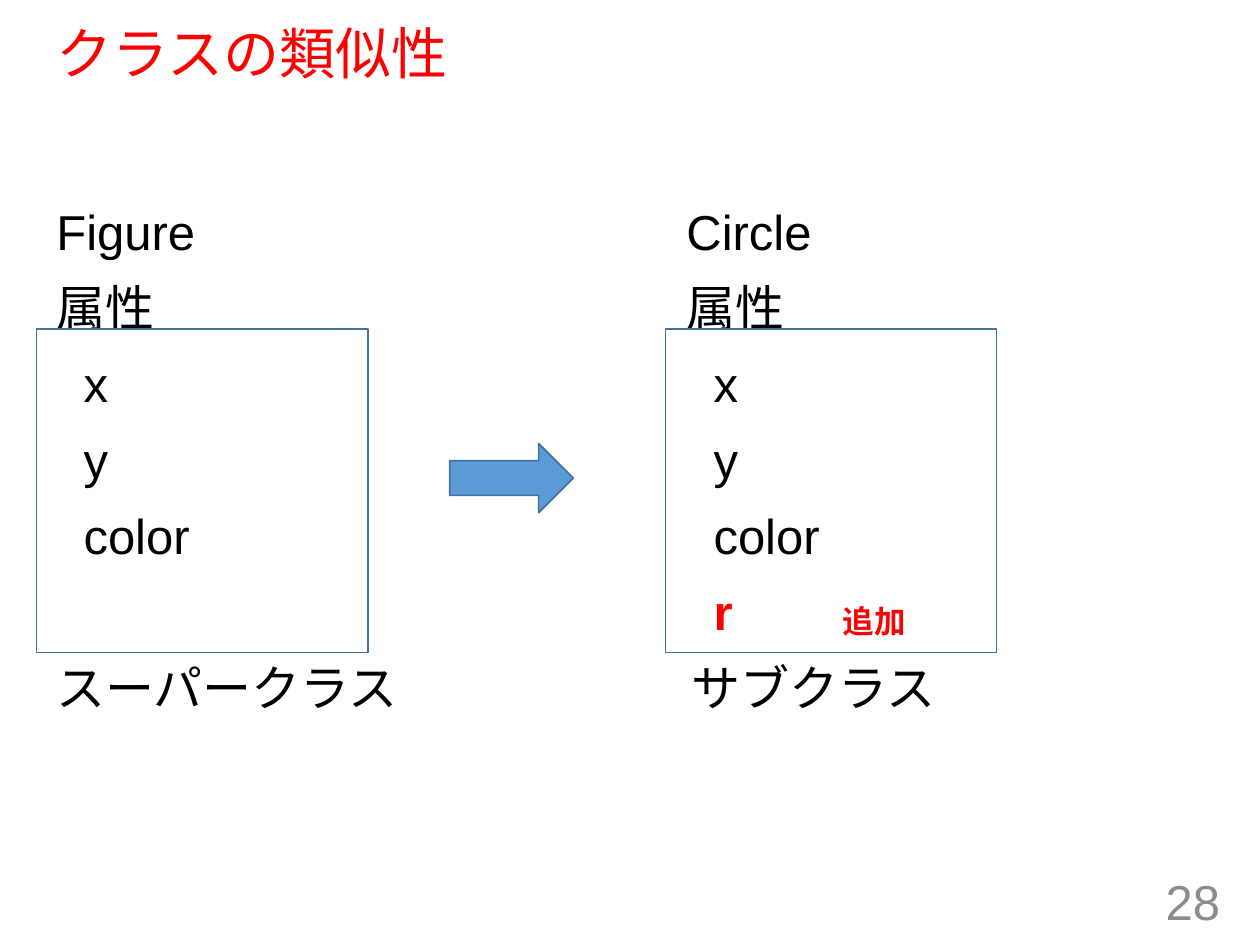
from dataclasses import dataclass

from pptx import Presentation
from pptx.dml.color import RGBColor
from pptx.enum import shapes, text
from pptx.util import Pt

COLORS = {"red": "FF0000", "black": "000000", "gray": "8C8C8C",
          "blue": "5B9BD5", "outline": "43739E"}
FONT = "Arial"
LINE, GAP = 33.4, 10  # line height and space between lines


@dataclass
class Row:
    text: str
    indent: float = 0
    gap: float = GAP
    color: str = "black"
    bold: bool = False


@dataclass
class ClassColumn:
    left: float
    frame_left: float
    rows: list[Row]


def rgb(name: str) -> RGBColor:
    return RGBColor.from_string(COLORS[name])


def write(p, content: str, *, size: float = 28, color: str = "black",
          bold: bool = False, align=text.PP_ALIGN.LEFT) -> None:
    p.alignment = align
    r = p.add_run()
    r.text = content
    f = r.font
    f.name, f.size, f.bold = FONT, Pt(size), bold
    f.color.rgb = rgb(color)


def add_box(s, x: float, y: float, w: float, h: float, *, wrap: bool = True,
            anchor=text.MSO_ANCHOR.TOP):
    tf = s.shapes.add_textbox(Pt(x), Pt(y), Pt(w), Pt(h)).text_frame
    tf.word_wrap = wrap
    tf.vertical_anchor = anchor
    return tf


def add_outlined(s, kind, x: float, y: float, w: float, h: float,
                 fill: str | None = None) -> None:
    sp = s.shapes.add_shape(kind, Pt(x), Pt(y), Pt(w), Pt(h))
    sp.shadow.inherit = False
    if fill:
        sp.fill.solid()
        sp.fill.fore_color.rgb = rgb(fill)
    else:
        sp.fill.background()
    sp.line.color.rgb = rgb("outline")
    sp.line.width = Pt(1)


def add_column(s, col: ClassColumn) -> None:
    tf = add_box(s, col.left, 115.4, 260, 310)
    tf.margin_top = 0
    for i, row in enumerate(col.rows):
        p = tf.paragraphs[0] if i == 0 else tf.add_paragraph()
        p.line_spacing = Pt(LINE)
        p.space_before = Pt(row.gap if i else 0)
        p._p.get_or_add_pPr().set("marL", str(Pt(row.indent)))
        write(p, row.text, color=row.color, bold=row.bold)
    add_outlined(s, shapes.MSO_SHAPE.RECTANGLE, col.frame_left, 188, 189.2, 185)


def main() -> None:
    prs = Presentation()
    prs.slide_width, prs.slide_height = Pt(720), Pt(540)
    s = prs.slides.add_slide(prs.slide_layouts[6])

    # Title
    tf = add_box(s, 25.2, 13.7, 666, 36.7, anchor=text.MSO_ANCHOR.MIDDLE)
    tf.paragraphs[0].line_spacing = 0.9
    write(tf.paragraphs[0], "クラスの類似性", size=32, color="red")

    # Superclass and subclass with their shared attributes
    shared = [Row(name, 15.5) for name in ("x", "y", "color")]
    columns = [
        ClassColumn(25.2, 20.9, [
            Row("Figure"), Row("属性"), *shared,
            Row("スーパークラス", gap=LINE + 2 * GAP)]),
        ClassColumn(385.2, 380.2, [
            Row("Circle"), Row("属性"), *shared,
            Row("r", 15.5, color="red", bold=True), Row("サブクラス", 3)]),
    ]
    for col in columns:
        add_column(s, col)

    # Label of the added attribute
    tf = add_box(s, 474.5, 340.6, 51.1, 28.8, wrap=False)
    write(tf.paragraphs[0], "追加", size=18, color="red", bold=True)

    # Arrow from superclass to subclass
    add_outlined(s, shapes.MSO_SHAPE.RIGHT_ARROW, 257, 253.4, 70.6, 39.6, "blue")

    # Page number
    tf = add_box(s, 542.2, 500.4, 162, 28.8, anchor=text.MSO_ANCHOR.MIDDLE)
    write(tf.paragraphs[0], "28", color="gray", align=text.PP_ALIGN.RIGHT)

    prs.save("out.pptx")


if __name__ == "__main__":
    main()
